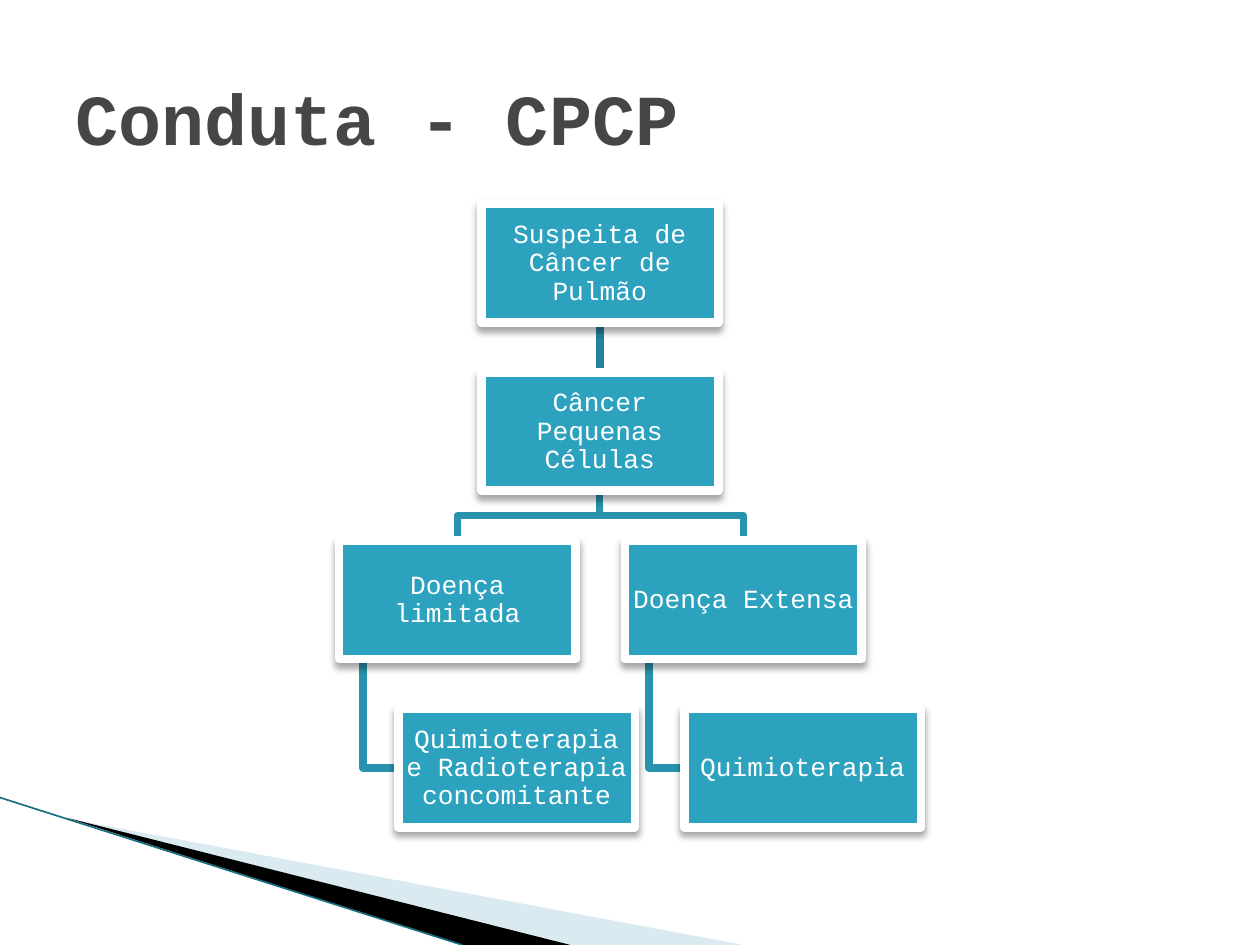
import pptx
import pptx.util
import pptx.oxml
import pptx.oxml.ns
import pptx.dml.color
import pptx.enum.shapes
import pptx.enum.text

Inches = pptx.util.Inches
Pt = pptx.util.Pt
FONT = "Courier New"
COLORS = {
    "box": "2DA2BF", "white": "FFFFFF", "title": "464646", "stem": "248299",
    "branch": "2993AD", "pale": "A0CBDC", "black": "000000", "edge": "1A6E82",
}
WIDE, HIGH = 1.88, 0.94
TOP, STEP = 1.62, 1.335
ROOT, LEFT, RIGHT = 3.82, 2.69, 4.96
INDENT, DROP = 0.47, 0.19


class Chart:
    """Draws styled elements on the current slide."""

    def __init__(self, slide):
        self.slide = slide
        self.shapes = slide.shapes

    def color(self, name):
        return pptx.dml.color.RGBColor.from_string(COLORS[name])

    def tag(self, parent, name, **values):
        node = pptx.oxml.parse_xml(f"<a:{name} {pptx.oxml.ns.nsdecls('a')}/>")
        for key, value in values.items():
            node.set(key, str(value))
        parent.append(node)
        return node

    def font(self, para, size, color, bold=False):
        para.font.name = FONT
        para.font.size = Pt(size)
        para.font.bold = bold
        para.font.color.rgb = self.color(color)

    def title(self, text):
        shape = self.shapes.title
        shape.left, shape.top = Inches(0.5), Inches(0.3)
        shape.width, shape.height = Inches(9), Inches(1.25)
        frame = shape.text_frame
        frame.text = text
        frame.vertical_anchor = pptx.enum.text.MSO_ANCHOR.MIDDLE
        para = frame.paragraphs[0]
        para.alignment = pptx.enum.text.PP_ALIGN.LEFT
        self.font(para, 41, "title", True)

    def trace(self, points, close):
        spots = [(Inches(x), Inches(y)) for x, y in points]
        form = self.shapes.build_freeform(*spots[0])
        form.add_line_segments(spots[1:], close=close)
        shape = form.convert_to_shape()
        shape.shadow.inherit = False
        return shape

    def wedge(self, points, color, alpha=100):
        shape = self.trace(points, True)
        shape.fill.solid()
        shape.fill.fore_color.rgb = self.color(color)
        shape.line.fill.background()
        if alpha < 100:
            tint = shape.fill._xPr.find(".//" + pptx.oxml.ns.qn("a:srgbClr"))
            self.tag(tint, "alpha", val=alpha * 1000)

    def bend(self, points):
        shape = self.trace(points, False)
        shape.fill.background()
        shape.line.color.rgb = self.color("branch")
        shape.line.width = Pt(4.33)

    def line(self, start, end, color, width):
        link = self.shapes.add_connector(
            pptx.enum.shapes.MSO_CONNECTOR.STRAIGHT,
            *(Inches(value) for value in (*start, *end)))
        link.line.color.rgb = self.color(color)
        link.line.width = Pt(width)
        self.tag(link._element.spPr, "effectLst")

    def box(self, left, row, text):
        shape = self.shapes.add_shape(
            pptx.enum.shapes.MSO_SHAPE.RECTANGLE, Inches(left),
            Inches(TOP + row * STEP), Inches(WIDE), Inches(HIGH))
        shape.fill.solid()
        shape.fill.fore_color.rgb = self.color("box")
        shape.line.color.rgb = self.color("white")
        shape.line.width = Pt(5)
        shape.shadow.inherit = False
        effects = shape._element.spPr.find(pptx.oxml.ns.qn("a:effectLst"))
        shade = self.tag(effects, "outerShdw", blurRad=Pt(4), dist=Pt(3),
                         dir=5400000, algn="ctr", rotWithShape=0)
        tint = self.tag(shade, "srgbClr", val=COLORS["black"])
        self.tag(tint, "alpha", val=35000)
        frame = shape.text_frame
        frame.word_wrap = True
        frame.margin_left = frame.margin_right = Inches(0.01)
        frame.margin_top = frame.margin_bottom = Inches(0.01)
        frame.vertical_anchor = pptx.enum.text.MSO_ANCHOR.MIDDLE
        frame.text = text
        para = frame.paragraphs[0]
        para.alignment = pptx.enum.text.PP_ALIGN.CENTER
        para.line_spacing = 0.9
        self.font(para, 15, "white")


def main():
    deck = pptx.Presentation()
    deck.slide_width, deck.slide_height = Inches(10), Inches(7.5)
    chart = Chart(deck.slides.add_slide(deck.slide_layouts[5]))
    chart.title("Conduta - CPCP")

    chart.wedge([(0.55, 6.5), (5.9, 7.5), (4.54, 7.5)], "pale", 40)
    chart.wedge([(0.53, 6.49), (4.53, 7.5), (3.67, 7.5)], "black")
    chart.line((0, 6.33), (3.67, 7.5), "edge", 0.95)

    tops = [TOP + row * STEP for row in range(4)]
    ends = [top + HIGH for top in tops]
    mid = ROOT + WIDE / 2
    bar = (ends[1] + tops[2]) / 2
    for left in (RIGHT, LEFT):
        side = left + DROP
        level = tops[3] + HIGH / 2
        chart.bend([(side, ends[2]), (side, level), (left + INDENT, level)])
        heart = left + WIDE / 2
        chart.bend([(mid, ends[1]), (mid, bar), (heart, bar), (heart, tops[2])])
    chart.line((mid, ends[0]), (mid, tops[1]), "stem", 4.33)

    for left, row, text in (
        (ROOT, 0, "Suspeita de Câncer de Pulmão"),
        (ROOT, 1, "Câncer Pequenas Células"),
        (LEFT, 2, "Doença limitada"),
        (LEFT + INDENT, 3, "Quimioterapia e Radioterapia concomitante"),
        (RIGHT, 2, "Doença Extensa"),
        (RIGHT + INDENT, 3, "Quimioterapia"),
    ):
        chart.box(left, row, text)
    deck.save("out.pptx")


if __name__ == "__main__":
    main()
